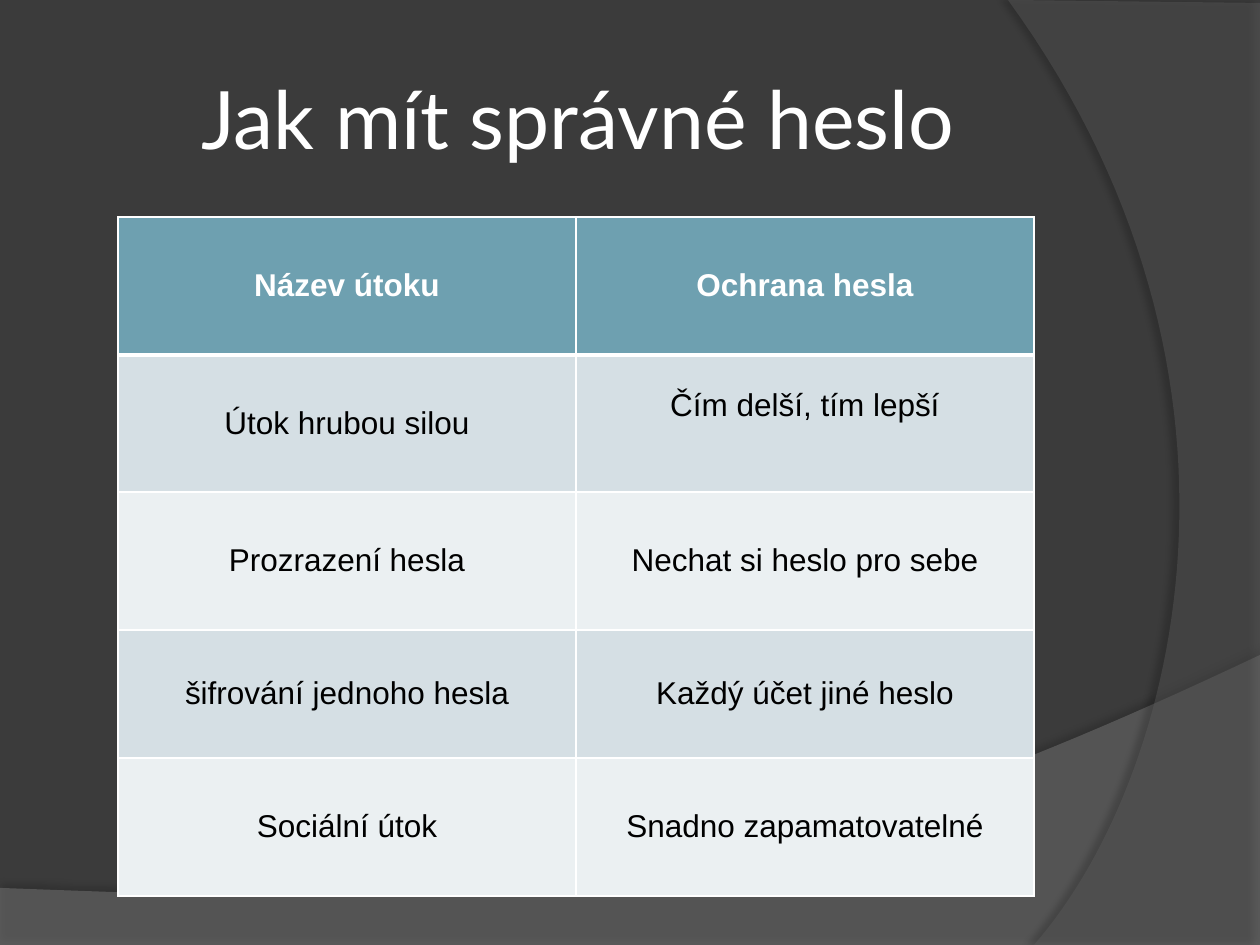
from dataclasses import dataclass

from pptx import Presentation
from pptx.dml.color import RGBColor
from pptx.enum.text import MSO_ANCHOR, PP_ALIGN
from pptx.oxml import parse_xml
from pptx.oxml.ns import nsdecls, qn
from pptx.util import Pt

PX = 914400 / 126
CENTER = PP_ALIGN.CENTER
MIDDLE = MSO_ANCHOR.MIDDLE
TITLE_ONLY = 5


@dataclass(frozen=True)
class Theme:
    background: str = "3B3B3B"
    wave: str = "7F7F7F"
    arc: str = "5E5E5E"
    light: str = "FFFFFF"
    dark: str = "000000"
    header: str = "6EA0B0"
    bands: tuple = ("D5DFE4", "EBF0F2")
    title_font: str = "Lato"
    body_font: str = "Arial"
    title_size: int = 46
    body_size: int = 18


def emu(px):
    return round(px * PX)


def bezier(p0, p1, p2, p3, steps=60):
    points = []
    for i in range(steps + 1):
        t = i / steps
        weights = ((1 - t) ** 3, 3 * t * (1 - t) ** 2, 3 * t * t * (1 - t), t ** 3)
        points.append(tuple(sum(w * p[axis] for w, p in zip(weights, (p0, p1, p2, p3)))
                            for axis in (0, 1)))
    return points


class SlideBuilder:
    def __init__(self, prs, theme):
        self.theme = theme
        self.s = prs.slides.add_slide(prs.slide_layouts[TITLE_ONLY])
        self.fill(self.s.background, theme.background)

    def fill(self, target, color):
        target.fill.solid()
        target.fill.fore_color.rgb = RGBColor.from_string(color)

    def text(self, tf, content, font, size, color, bold=False):
        p = tf.paragraphs[0]
        p.alignment = CENTER
        r = p.add_run()
        r.text = content
        r.font.name = font
        r.font.size = Pt(size)
        r.font.bold = bold
        r.font.color.rgb = RGBColor.from_string(color)

    def title(self, content, x, y, w, h):
        sp = self.s.shapes.title
        sp.left, sp.top, sp.width, sp.height = map(emu, (x, y, w, h))
        tf = sp.text_frame
        tf.word_wrap = True
        tf.vertical_anchor = MIDDLE
        tf.margin_left = tf.margin_right = tf.margin_top = tf.margin_bottom = emu(6)
        self.text(tf, content, self.theme.title_font, self.theme.title_size, self.theme.light)

    def backdrop(self, points, color, opacity, shadow_opacity, distance, direction):
        start, *rest = [(emu(x), emu(y)) for x, y in points]
        builder = self.s.shapes.build_freeform(*start, scale=1.0)
        builder.add_line_segments(rest, close=True)
        sp = builder.convert_to_shape()
        self.fill(sp, color)
        sp.line.fill.background()
        clr = sp.element.spPr.find(qn("a:solidFill"))[0]
        clr.append(parse_xml(f'<a:alpha {nsdecls("a")} val="{opacity * 1000}"/>'))
        sp.element.spPr.append(parse_xml(
            f'<a:effectLst {nsdecls("a")}><a:outerShdw blurRad="{Pt(4)}" '
            f'dist="{Pt(distance)}" dir="{direction * 60000}" algn="ctr" rotWithShape="0">'
            f'<a:srgbClr val="{self.theme.dark}"><a:alpha val="{shadow_opacity * 1000}"/>'
            f'</a:srgbClr></a:outerShdw></a:effectLst>'))
        self.s.shapes.title.element.addprevious(sp.element)

    def borders(self, cell, top, bottom):
        tcPr = cell._tc.get_or_add_tcPr()
        sides = (("L", 1), ("R", 1), ("T", top), ("B", bottom))
        for i, (side, width) in enumerate(sides):
            tcPr.insert(i, parse_xml(
                f'<a:ln{side} {nsdecls("a")} w="{Pt(width)}"><a:solidFill>'
                f'<a:srgbClr val="{self.theme.light}"/></a:solidFill></a:ln{side}>'))

    def table(self, rows, x, y, col_width, heights):
        th = self.theme
        cols = len(rows[0])
        frame = self.s.shapes.add_table(len(rows), cols, emu(x), emu(y),
                                        emu(col_width * cols), emu(sum(heights)))
        table = frame.table
        for col in table.columns:
            col.width = emu(col_width)
        for i, texts in enumerate(rows):
            table.rows[i].height = emu(heights[i])
            header = i == 0
            for j, content in enumerate(texts):
                cell = table.cell(i, j)
                cell.vertical_anchor = MIDDLE
                self.fill(cell, th.header if header else th.bands[(i - 1) % 2])
                self.text(cell.text_frame, content, th.body_font, th.body_size,
                          th.light if header else th.dark, header)
                self.borders(cell, 3 if i == 1 else 1, 3 if header else 1)
        return table


def main():
    prs = Presentation()
    prs.slide_width, prs.slide_height = emu(1260), emu(945)
    theme = Theme()
    slide = SlideBuilder(prs, theme)

    wave = bezier((1260, 655), (704, 919), (493, 906), (0, 888))
    slide.backdrop([(0, 945), (1260, 945)] + wave, theme.wave, 45, 35, 3.5, 270)
    arc = bezier((1034, 945), (1178, 780), (1283, 378), (1008, 0))
    slide.backdrop([(1260, 3), (1260, 945)] + arc, theme.arc, 40, 45, 4, 180)

    slide.title("Jak mít správné heslo", 63, 38, 1029, 158)
    attacks = [
        ("Název útoku", "Ochrana hesla"),
        ("Útok hrubou silou", "Čím delší, tím lepší"),
        ("Prozrazení hesla", "Nechat si heslo pro sebe"),
        ("šifrování jednoho hesla", "Každý účet jiné heslo"),
        ("Sociální útok", "Snadno zapamatovatelné"),
    ]
    table = slide.table(attacks, 118, 217, 458, (138, 137, 138, 128, 138))
    table.cell(1, 1).margin_bottom = emu(42)

    prs.save("out.pptx")


if __name__ == "__main__":
    main()
